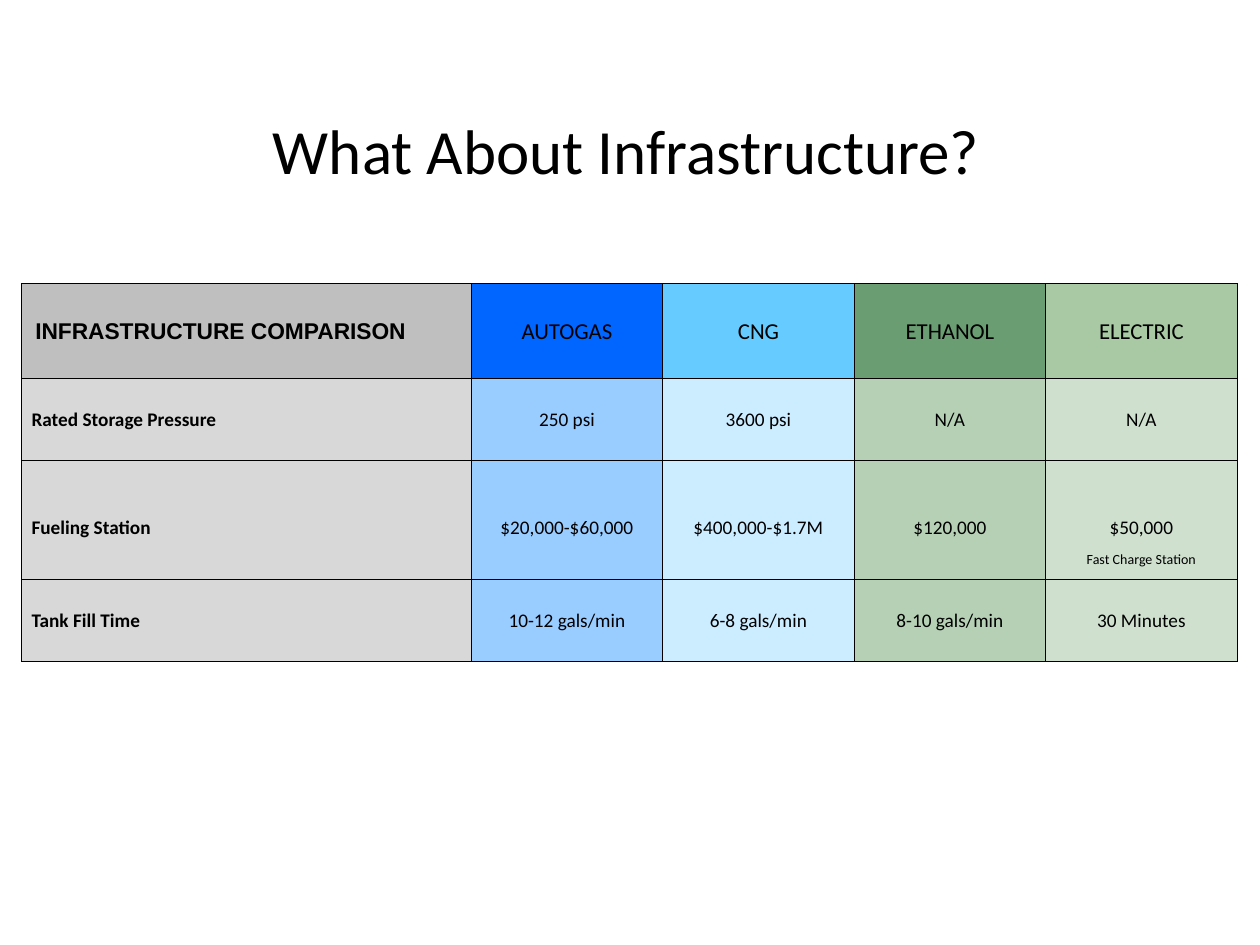
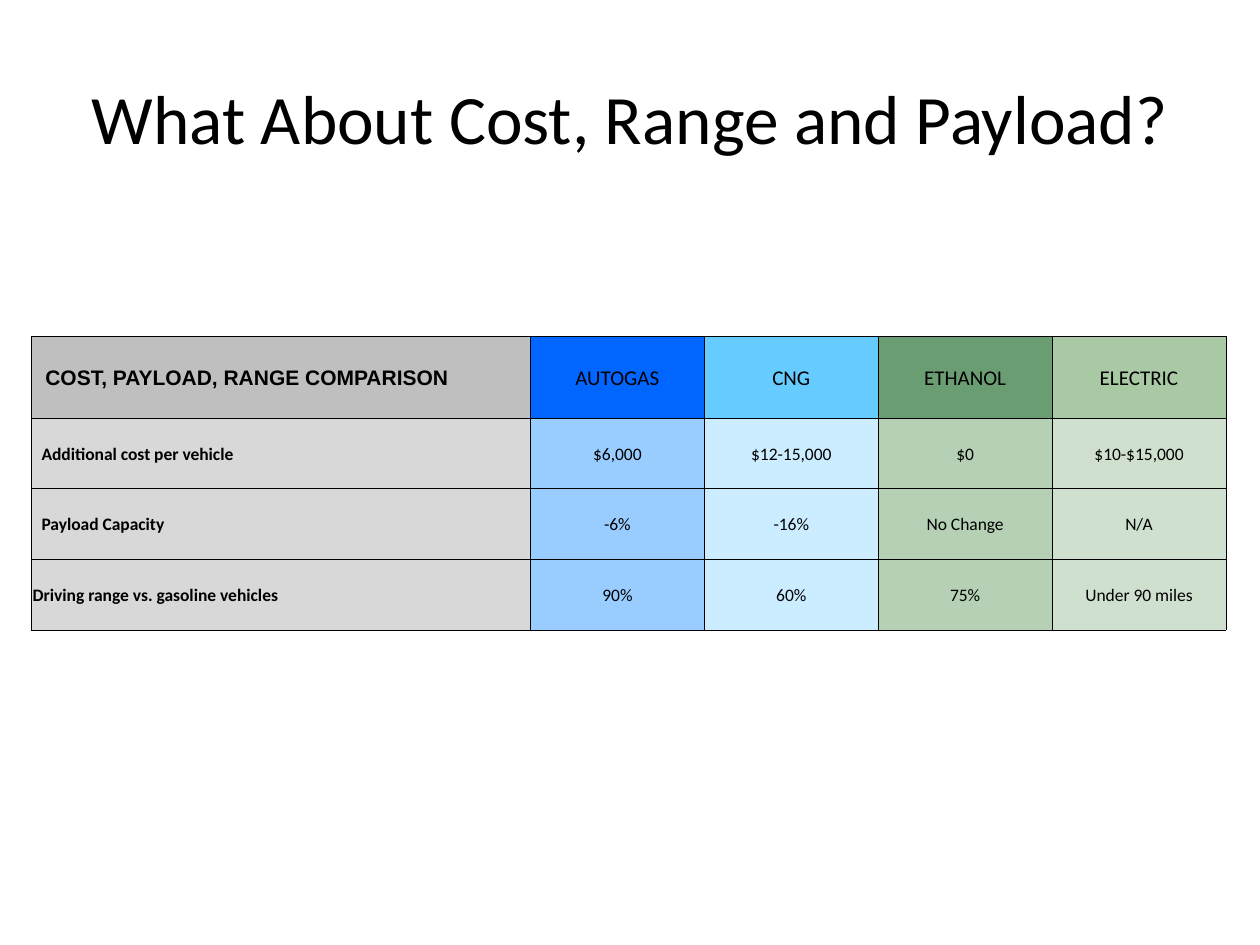
from lxml.etree import SubElement
from pptx import Presentation
from pptx.dml.color import RGBColor
from pptx.enum.text import MSO_ANCHOR, PP_ALIGN
from pptx.oxml.ns import qn
from pptx.util import Inches, Pt

BLACK = RGBColor(0x00, 0x00, 0x00)
HEAD_FILLS = [RGBColor.from_string(c) for c in
              ("BFBFBF", "0066FF", "66CCFF", "6B9D73", "A8C9A3")]
BODY_FILLS = [RGBColor.from_string(c) for c in
              ("D8D8D8", "99CCFF", "CCECFF", "B5D0B4", "CFE0CE")]
FUELS = ["AUTOGAS", "CNG", "ETHANOL", "ELECTRIC"]
PAD = 0.01
HEAD_GAP = 0.1
LABEL_GAP = 0.07
TITLE_ONLY = 5

STORAGE = [
    ["INFRASTRUCTURE COMPARISON", *FUELS],
    ["Rated Storage Pressure", "250 psi", "3600 psi", "N/A", "N/A"],
    ["Fueling Station", "$20,000-$60,000", "$400,000-$1.7M", "$120,000", "$50,000"],
    ["", "", "", "", "Fast Charge Station"],
    ["Tank Fill Time", "10-12 gals/min", "6-8 gals/min", "8-10 gals/min", "30 Minutes"],
]
STATION, NOTE = 2, 3
COSTS = [
    ["COST, PAYLOAD, RANGE COMPARISON", *FUELS],
    ["Additional cost per vehicle", "$6,000", "$12-15,000", "$0", "$10-$15,000"],
    ["Payload Capacity", "-6%", "-16%", "No Change", "N/A"],
    ["Driving range vs. gasoline vehicles", "90%", "60%", "75%", "Under 90 miles"],
]
RANGE = 3


def style(item, values):
    for name, value in values.items():
        setattr(item, name, value)


def add_title(slide, text, box, size):
    title = slide.shapes.title
    style(title, dict(zip(("left", "top", "width", "height"), map(Inches, box))))
    frame = title.text_frame
    frame.text = text
    style(frame, {"vertical_anchor": MSO_ANCHOR.MIDDLE, "word_wrap": True})
    para = frame.paragraphs[0]
    para.alignment = PP_ALIGN.CENTER
    font = para.runs[0].font
    style(font, {"name": "Calibri", "size": Pt(size)})
    font.color.rgb = BLACK


def add_edges(cell, open_side):
    """Draw thin black cell borders, leaving out the open side."""
    props = cell._tc.get_or_add_tcPr()
    for side in "LRTB":
        line = SubElement(props, qn(f"a:ln{side}"), w=str(Pt(0.5)))
        if side == open_side:
            SubElement(line, qn("a:noFill"))
        else:
            fill = SubElement(line, qn("a:solidFill"))
            SubElement(fill, qn("a:srgbClr"), val=str(BLACK))


def fill_cell(cell, text, fill, gap, face, anchor=MSO_ANCHOR.MIDDLE, open_side=None):
    add_edges(cell, open_side)
    cell.fill.solid()
    cell.fill.fore_color.rgb = fill
    style(cell, {"margin_left": Inches(PAD + gap), "margin_right": Inches(PAD),
                 "margin_top": Inches(PAD), "margin_bottom": 0,
                 "vertical_anchor": anchor})
    para = cell.text_frame.paragraphs[0]
    para.alignment = PP_ALIGN.LEFT if face["bold"] else PP_ALIGN.CENTER
    run = para.add_run()
    run.text = text
    style(run.font, face)
    run.font.color.rgb = BLACK


def add_grid(slide, data, spot, widths, heights, sizes, flush=None, pair=()):
    """Add a table; flush is a row without label gap, pair two rows joined."""
    left, top = spot
    frame = slide.shapes.add_table(
        len(data), len(widths), Inches(left), Inches(top),
        Inches(sum(widths)), Inches(sum(heights)))
    table = frame.table
    style(table, {"first_row": False, "horz_banding": False})
    for col, width in zip(table.columns, widths):
        col.width = Inches(width)
    for row, height in zip(table.rows, heights):
        row.height = Inches(height)
    head, body, note = sizes
    for r, line in enumerate(data):
        fills = BODY_FILLS if r else HEAD_FILLS
        size = body if r else head
        extra = {}
        if pair and r == pair[0]:
            extra = {"anchor": MSO_ANCHOR.BOTTOM, "open_side": "B"}
        elif pair and r == pair[1]:
            extra = {"open_side": "T"}
            size = note
        for c, text in enumerate(line):
            gap = 0
            if c == 0 and r != flush:
                gap = LABEL_GAP if r else HEAD_GAP
            face = {"name": "Arial" if r == c == 0 else "Calibri",
                    "size": Pt(size), "bold": c == 0}
            fill_cell(table.cell(r, c), text, fills[c], gap, face, **extra)


def main():
    deck = Presentation()
    style(deck, {"slide_width": Inches(10), "slide_height": Inches(7.5)})
    layout = deck.slide_layouts[TITLE_ONLY]

    slide = deck.slides.add_slide(layout)
    add_title(slide, "What About Infrastructure?", (2.02, 0.83, 5.9, 0.71), 36)
    add_grid(slide, STORAGE, (0.17, 2.25), [3.57] + [1.52] * 4,
             [0.75, 0.65, 0.63, 0.32, 0.65], (13, 11, 8), pair=(STATION, NOTE))

    slide = deck.slides.add_slide(layout)
    add_title(slide, "What About Cost, Range and Payload?", (0.5, 0.3, 9, 1.25), 39.6)
    add_grid(slide, COSTS, (0.25, 2.67), [3.96] + [1.38] * 4,
             [0.65] + [0.56] * 3, (12, 10, 10), flush=RANGE)

    deck.save("out.pptx")


if __name__ == "__main__":
    main()
